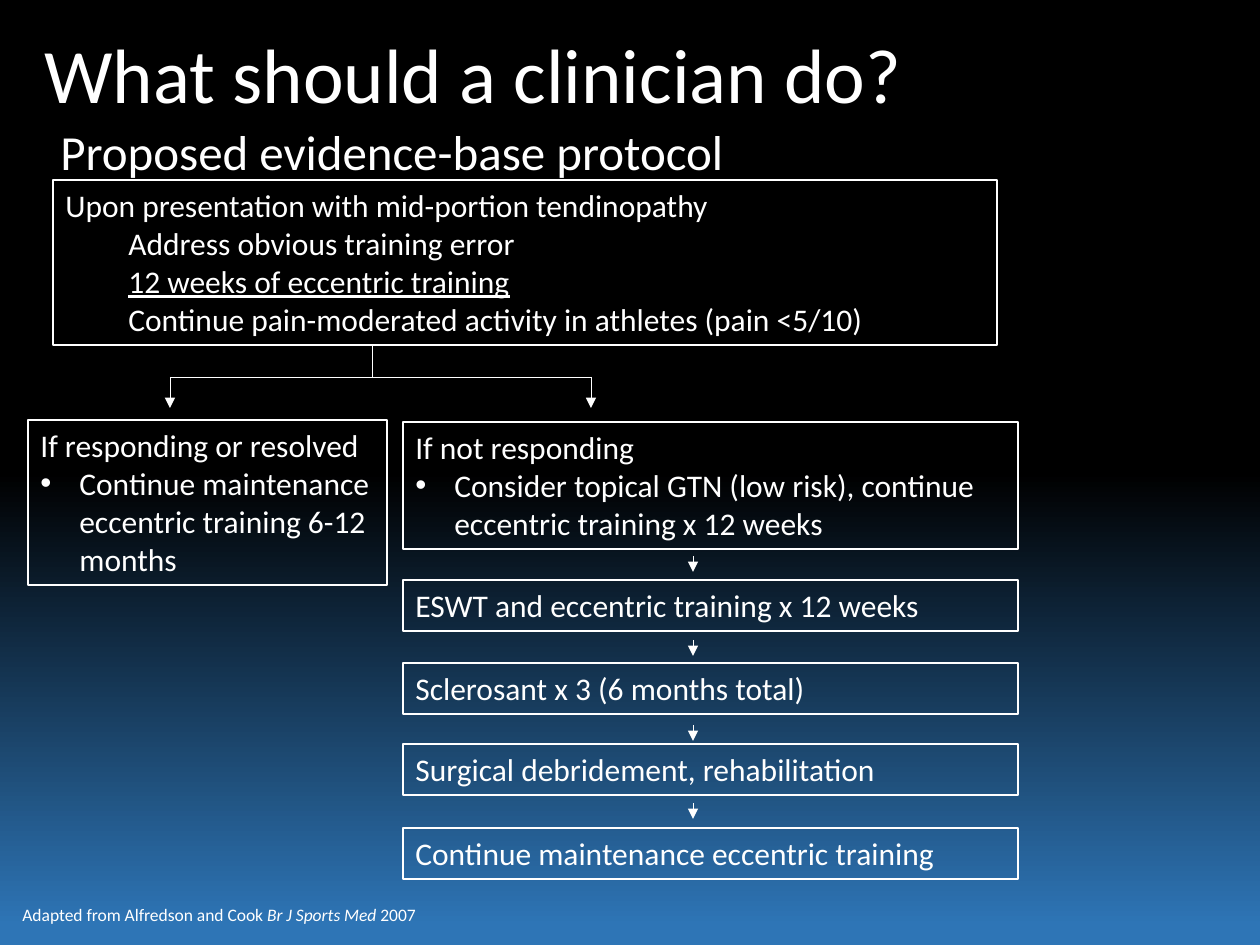
from copy import deepcopy
from dataclasses import dataclass

from pptx import Presentation, util as u
from pptx.dml import color
from pptx.enum import shapes, text
from pptx.oxml import ns, xmlchemy


@dataclass(frozen=True)
class Theme:
    font: str = "Calibri"
    ink: color.RGBColor = color.RGBColor.from_string("FFFFFF")
    gradient: tuple = ((0, "000000"), (0.5, "000000"), (0.98, "2E75B6"))
    title: int = 44
    subtitle: int = 28
    body: int = 18
    source: int = 10
    box_line: float = 0.75
    arrow_line: float = 0.5


def px(length):
    return u.Emu(round(length * 914400 / 126))


def assign(target, values):
    for name, value in values.items():
        setattr(target, name, value)


def add_element(parent, tag, **attributes):
    element = xmlchemy.OxmlElement(tag)
    for name, value in attributes.items():
        element.set(name, value)
    parent.append(element)


class Canvas:
    def __init__(self, slide, theme):
        self.slide = slide
        self.theme = theme

    def background(self):
        fill = self.slide.background.fill
        fill.gradient()
        fill.gradient_angle = 270
        stop_list = self.slide.element.find(".//" + ns.qn("a:gsLst"))
        stop_list.append(deepcopy(stop_list[-1]))
        for stop, (position, value) in zip(fill.gradient_stops, self.theme.gradient):
            stop.position = position
            stop.color.rgb = color.RGBColor.from_string(value)

    def fill_text(self, shape, paragraphs, size, frame_format):
        frame = shape.text_frame
        assign(frame, {"word_wrap": True, "vertical_anchor": text.MSO_ANCHOR.TOP, **frame_format})
        for index, (runs, layout) in enumerate(paragraphs):
            paragraph = frame.add_paragraph() if index else frame.paragraphs[0]
            properties = paragraph._p.get_or_add_pPr()
            layout = dict(layout)
            for name in ("marL", "indent"):
                properties.set(name, str(px(layout.pop(name, 0))))
            if layout.pop("bullet", False):
                add_element(properties, "a:buFont", typeface="Arial")
                add_element(properties, "a:buChar", char="•")
            assign(paragraph, {"alignment": text.PP_ALIGN.LEFT, **layout})
            for words, run_format in runs:
                run = paragraph.add_run()
                run.text = words
                assign(run.font, {"name": self.theme.font, "size": u.Pt(size), **run_format})
                run.font.color.rgb = self.theme.ink

    def label(self, place, paragraphs, size, **frame_format):
        shape = self.slide.shapes.add_textbox(*map(px, place))
        self.fill_text(shape, paragraphs, size, frame_format)

    def box(self, place, paragraphs):
        shape = self.slide.shapes.add_shape(shapes.MSO_SHAPE.RECTANGLE, *map(px, place))
        shape.shadow.inherit = False
        shape.fill.background()
        shape.line.color.rgb = self.theme.ink
        shape.line.width = u.Pt(self.theme.box_line)
        fit = {"auto_size": text.MSO_AUTO_SIZE.SHAPE_TO_FIT_TEXT}
        self.fill_text(shape, paragraphs, self.theme.body, fit)

    def line(self, start, end, arrow=False):
        connector = self.slide.shapes.add_connector(
            shapes.MSO_CONNECTOR.STRAIGHT, *map(px, (*start, *end))
        )
        connector.line.color.rgb = self.theme.ink
        connector.line.width = u.Pt(self.theme.arrow_line)
        if arrow:
            add_element(connector.line._get_or_add_ln(), "a:tailEnd", type="triangle")
        add_element(connector._element.spPr, "a:effectLst")


def plain(words, run_format=None, **layout):
    return [(words, run_format or {})], layout


def bullet(words):
    return plain(words, marL=39, indent=-39, bullet=True)


def main():
    presentation = Presentation()
    assign(presentation, {"slide_width": px(1260), "slide_height": px(945)})
    theme = Theme()
    canvas = Canvas(presentation.slides.add_slide(presentation.slide_layouts[6]), theme)
    canvas.background()

    canvas.label(
        (32, 0, 1049, 158),
        [plain("What should a clinician do?", line_spacing=0.9)],
        theme.title,
        vertical_anchor=text.MSO_ANCHOR.MIDDLE,
    )
    canvas.label(
        (32, 122, 1108, 68),
        [plain("Proposed evidence-base protocol", line_spacing=0.9, marL=16)],
        theme.subtitle,
    )

    step = {"marL": 63, "level": 1}
    canvas.box((53, 180, 944, 165), [
        plain("Upon presentation with mid-portion tendinopathy"),
        plain("Address obvious training error", **step),
        plain("12 weeks of eccentric training", {"underline": True}, **step),
        plain("Continue pain-moderated activity in athletes (pain <5/10)", **step),
    ])
    canvas.box((28, 420, 359, 165), [
        plain("If responding or resolved"),
        bullet("Continue maintenance eccentric training 6-12 months"),
    ])
    left, width = 403, 615
    canvas.box((left, 422, width, 127), [
        plain("If not responding"),
        bullet("Consider topical GTN (low risk), continue eccentric training x 12 weeks"),
    ])

    stem, branches, fork = 372, (170, 591), 377
    canvas.line((stem, 345), (stem, fork))
    canvas.line((branches[0], fork), (branches[1], fork))
    for branch in branches:
        canvas.line((branch, fork), (branch, 408), arrow=True)

    stages = (
        (556, 580, "ESWT and eccentric training x 12 weeks"),
        (640, 663, "Sclerosant x 3 (6 months total)"),
        (725, 744, "Surgical debridement, rehabilitation"),
        (803, 828, "Continue maintenance eccentric training"),
    )
    for arrow_top, box_top, words in stages:
        canvas.line((693, arrow_top), (693, arrow_top + 16), arrow=True)
        canvas.box((left, box_top, width, 51), [plain(words)])

    source = [
        ("Adapted from Alfredson and Cook ", {}),
        ("Br J Sports Med ", {"italic": True}),
        ("2007", {}),
    ]
    canvas.label((10, 898, 425, 34), [(source, {})], theme.source, word_wrap=False)

    presentation.save("out.pptx")


if __name__ == "__main__":
    main()
